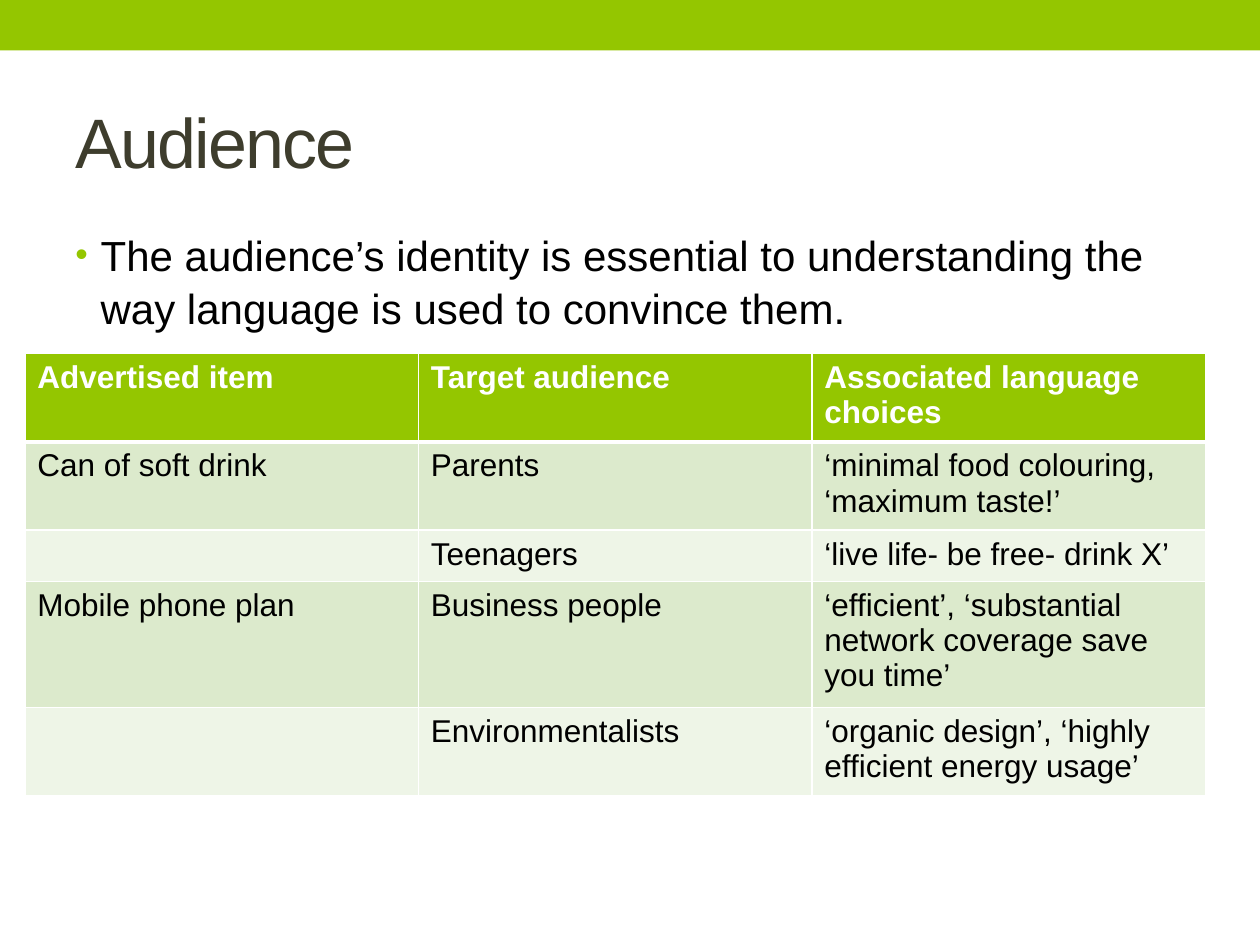
from pptx import Presentation
from pptx.dml.color import RGBColor
from pptx.enum.shapes import MSO_SHAPE as Shape
from pptx.enum.text import MSO_ANCHOR as Anchor
from pptx.oxml import parse_xml
from pptx.oxml.ns import nsdecls
from pptx.util import Cm, Pt

GREEN, PALE, PALER = "94C600", "DCEACC", "EEF5E7"
WHITE, BLACK, OLIVE = "FFFFFF", "000000", "3E3D2D"
SLIDE_WIDTH, SLIDE_HEIGHT = 25.4, 19.05

HEADINGS = ["Advertised item", "Target audience", "Associated language choices"]
EXAMPLES = [
    ["Can of soft drink", "Parents", "‘minimal food colouring, ‘maximum taste!’"],
    ["", "Teenagers", "‘live life- be free- drink X’"],
    ["Mobile phone plan", "Business people",
     "‘efficient’, ‘substantial network coverage save you time’"],
    ["", "Environmentalists", "‘organic design’, ‘highly efficient energy usage’"],
]
ROW_HEIGHTS = [1.67, 1.67, 1.03, 2.38, 1.67]


def color(value):
    return RGBColor.from_string(value)


def apply(target, values):
    for name, value in values.items():
        setattr(target, name, value)


class SlideBuilder:
    font = "Arial"

    def __init__(self, slide):
        self.slide = slide

    def style(self, run, size, hue, bold=False):
        apply(run.font, {"name": self.font, "size": Pt(size), "bold": bold})
        run.font.color.rgb = color(hue)

    def band(self, box, hue):
        band = self.slide.shapes.add_shape(Shape.RECTANGLE, *map(Cm, box))
        band.shadow.inherit = False
        band.fill.solid()
        band.fill.fore_color.rgb = color(hue)
        band.line.fill.background()

    def text(self, box, wording, size, hue, anchor=Anchor.TOP):
        frame = self.slide.shapes.add_textbox(*map(Cm, box)).text_frame
        apply(frame, {"word_wrap": True, "vertical_anchor": anchor})
        paragraph = frame.paragraphs[0]
        run = paragraph.add_run()
        run.text = wording
        self.style(run, size, hue)
        return paragraph

    def title(self, box, wording):
        paragraph = self.text(box, wording, 40, OLIVE, Anchor.MIDDLE)
        paragraph.runs[0].font._element.set("spc", "-100")

    def bullet(self, box, wording):
        paragraph = self.text(box, wording, 24, BLACK)
        apply(paragraph, {"space_before": Pt(4.8), "line_spacing": 1.05})
        properties = paragraph._p.get_or_add_pPr()
        properties.set("marL", str(Cm(0.51)))
        properties.set("indent", str(-Cm(0.51)))
        for part in (f'<a:buClr {nsdecls("a")}><a:srgbClr val="{GREEN}"/></a:buClr>',
                     f'<a:buSzPct {nsdecls("a")} val="85000"/>',
                     f'<a:buFont {nsdecls("a")} typeface="{self.font}"/>',
                     f'<a:buChar {nsdecls("a")} char="•"/>'):
            properties.append(parse_xml(part))

    def borders(self, cell, widths):
        """Draw white cell edges; widths maps L, R, T and B to points."""
        for side, width in widths.items():
            cell._tc.get_or_add_tcPr().append(parse_xml(
                f'<a:ln{side} {nsdecls("a")} w="{Pt(width)}"><a:solidFill>'
                f'<a:srgbClr val="{WHITE}"/></a:solidFill></a:ln{side}>'))

    def table(self, box, rows, heights):
        table = self.slide.shapes.add_table(
            len(rows), len(rows[0]), *map(Cm, box)).table
        table.horz_banding = False
        for row, height in zip(table.rows, heights):
            row.height = Cm(height)
        for r, row in enumerate(rows):
            header = r == 0
            fill = GREEN if header else PALE if r % 2 else PALER
            for c, wording in enumerate(row):
                cell = table.cell(r, c)
                self.borders(cell, {"L": 1, "R": 1, "T": 3 if r == 1 else 1,
                                    "B": 3 if header else 1})
                cell.fill.solid()
                cell.fill.fore_color.rgb = color(fill)
                if wording:
                    run = cell.text_frame.paragraphs[0].add_run()
                    run.text = wording
                    self.style(run, 18, WHITE if header else BLACK, header)


def main():
    deck = Presentation()
    apply(deck, {"slide_width": Cm(SLIDE_WIDTH), "slide_height": Cm(SLIDE_HEIGHT)})
    builder = SlideBuilder(deck.slides.add_slide(deck.slide_layouts[6]))
    builder.band((0, 0, SLIDE_WIDTH, 1.02), GREEN)
    builder.title((1.27, 1.47, 22.86, 2.74), "Audience")
    builder.bullet((1.27, 4.45, 22.86, 13.54),
                   "The audience’s identity is essential to understanding "
                   "the way language is used to convince them.")
    builder.table((0.5, 7.13, 23.8, sum(ROW_HEIGHTS)),
                  [HEADINGS, *EXAMPLES], ROW_HEIGHTS)
    deck.save("out.pptx")


if __name__ == "__main__":
    main()
